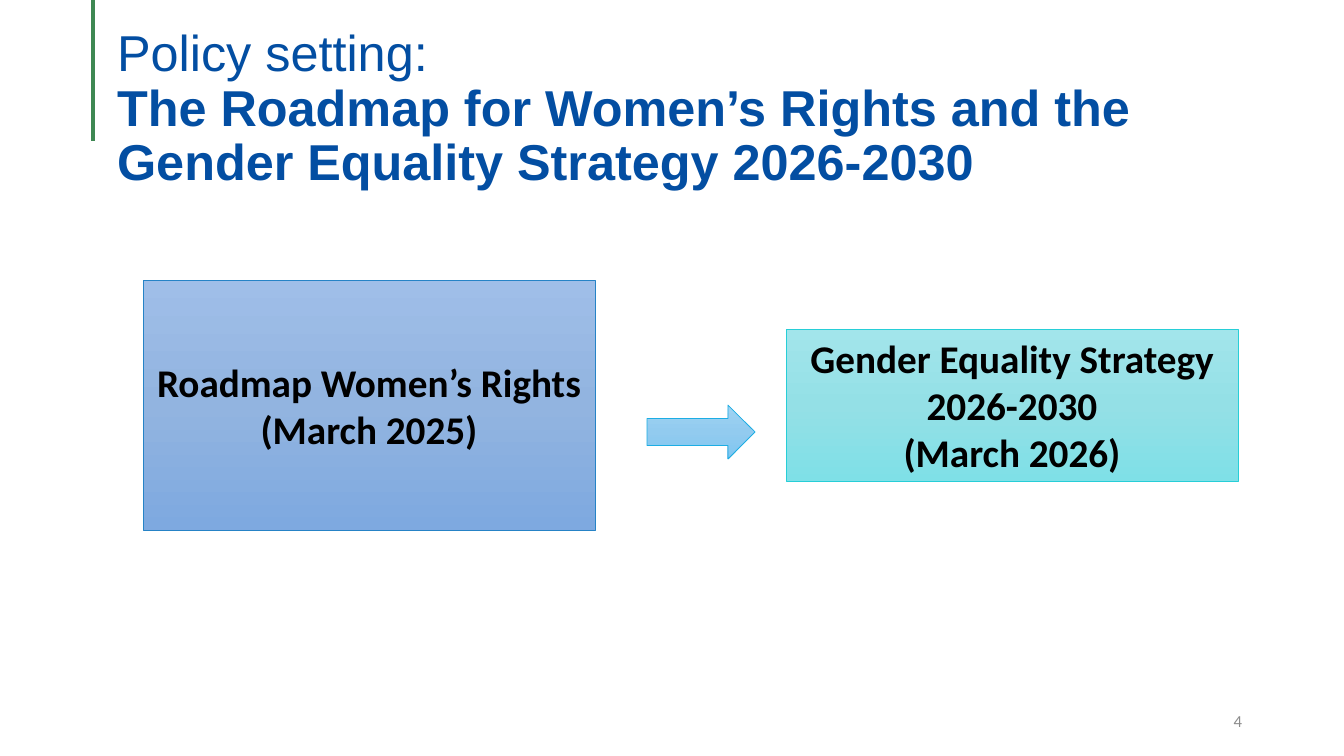
from copy import deepcopy
from dataclasses import dataclass

from lxml import etree
from pptx import Presentation
from pptx import util as u
from pptx.dml.color import RGBColor
from pptx.enum import shapes, text
from pptx.oxml.ns import qn

PX = 9071  # EMU per px, at 100.8 px to the inch


@dataclass(frozen=True)
class Theme:
    head_font: str = "Arial"
    body_font: str = "Calibri"
    title_size: int = 36
    box_size: int = 28
    number_size: int = 12
    title: str = "034EA2"
    rule: str = "3E8853"
    ink: str = "000000"
    number: str = "8C8C8C"
    # three gradient colours from top to bottom, then the outline
    roadmap: tuple = ("9FBEE8", "92B4E0", "7EA9E0", "2683C6")
    strategy: tuple = ("A2E5EB", "94E0E6", "7FE0E7", "27CED7")
    arrow: tuple = ("A0D3F2", "92CBEF", "7EC6F1", "1CADE4")


THEME = Theme()


def px(*lengths):
    return [u.Emu(n * PX) for n in lengths]


def rgb(value):
    return RGBColor.from_string(value)


def add_text(p, words, *, font, size, color, bold=False, align=None):
    r = p.add_run()
    r.text = words
    r.font.name, r.font.size, r.font.bold = font, u.Pt(size), bold
    r.font.color.rgb = rgb(color)
    if align is not None:
        p.alignment = align


def add_gradient_shape(slide, kind, box, colors):
    *stops, outline = colors
    sp = slide.shapes.add_shape(kind, *px(*box))
    sp.shadow.inherit = False
    sp.fill.gradient()
    sp.fill.gradient_angle = 270
    first = sp._element.spPr.find(".//" + qn("a:gs"))
    middle = deepcopy(first)
    middle.set("pos", "50000")
    first.addnext(middle)
    for stop, color in zip(sp.fill.gradient_stops, stops):
        stop.color.rgb = rgb(color)
    sp.line.color.rgb = rgb(outline)
    sp.line.width = u.Pt(0.5)
    return sp


def add_header(slide, box):
    left, top, width, height = box
    rule_x = left - 14
    rule = slide.shapes.add_connector(
        shapes.MSO_CONNECTOR.STRAIGHT, *px(rule_x, 0, rule_x, 141))
    rule.line.color.rgb = rgb(THEME.rule)
    rule.line.width = u.Pt(2.25)
    etree.SubElement(rule._element.spPr, qn("a:effectLst"))

    title = slide.shapes.title
    title.left, title.top, title.width, title.height = px(*box)
    tf = title.text_frame
    tf.word_wrap = True
    tf.auto_size = text.MSO_AUTO_SIZE.NONE
    tf.vertical_anchor = text.MSO_ANCHOR.MIDDLE
    p = tf.paragraphs[0]
    p.line_spacing = 0.9
    style = dict(font=THEME.head_font, size=THEME.title_size,
                 color=THEME.title, align=text.PP_ALIGN.LEFT)
    add_text(p, "Policy setting:", **style)
    p.add_line_break()
    add_text(p, "The Roadmap for Women’s Rights and the "
                "Gender Equality Strategy 2026-2030", bold=True, **style)


def add_milestone(slide, box, colors, lines):
    sp = add_gradient_shape(slide, shapes.MSO_SHAPE.RECTANGLE, box, colors)
    tf = sp.text_frame
    tf.word_wrap = True
    tf.vertical_anchor = text.MSO_ANCHOR.MIDDLE
    for i, line in enumerate(lines):
        p = tf.add_paragraph() if i else tf.paragraphs[0]
        add_text(p, line, font=THEME.body_font, size=THEME.box_size,
                 color=THEME.ink, bold=True, align=text.PP_ALIGN.CENTER)


def add_timeline(slide, box):
    """Place two milestones on one centre line, with an arrow between them."""
    left, top, width, height = box
    middle = top + height // 2
    step_w, strategy_h = 452, 152
    add_milestone(slide, (left, top, step_w, height), THEME.roadmap,
                  ["Roadmap Women’s Rights", "(March 2025)"])
    add_milestone(slide, (left + width - step_w, middle - strategy_h // 2,
                          step_w, strategy_h), THEME.strategy,
                  ["Gender Equality Strategy 2026-2030", "(March 2026)"])
    add_gradient_shape(slide, shapes.MSO_SHAPE.RIGHT_ARROW,
                       (left + step_w + 52, middle, 108, 54), THEME.arrow)


def add_page_number(slide, box, number):
    tf = slide.shapes.add_textbox(*px(*box)).text_frame
    tf.word_wrap = True
    tf.vertical_anchor = text.MSO_ANCHOR.MIDDLE
    add_text(tf.paragraphs[0], number, font=THEME.body_font,
             size=THEME.number_size, color=THEME.number,
             align=text.PP_ALIGN.RIGHT)


def main():
    prs = Presentation()
    prs.slide_width, prs.slide_height = px(1344, 756)
    slide = prs.slides.add_slide(prs.slide_layouts[5])
    add_header(slide, (107, 20, 1159, 180))
    add_timeline(slide, (143, 280, 1095, 250))
    add_page_number(slide, (950, 701, 302, 40), "4")
    prs.save("out.pptx")


if __name__ == "__main__":
    main()
